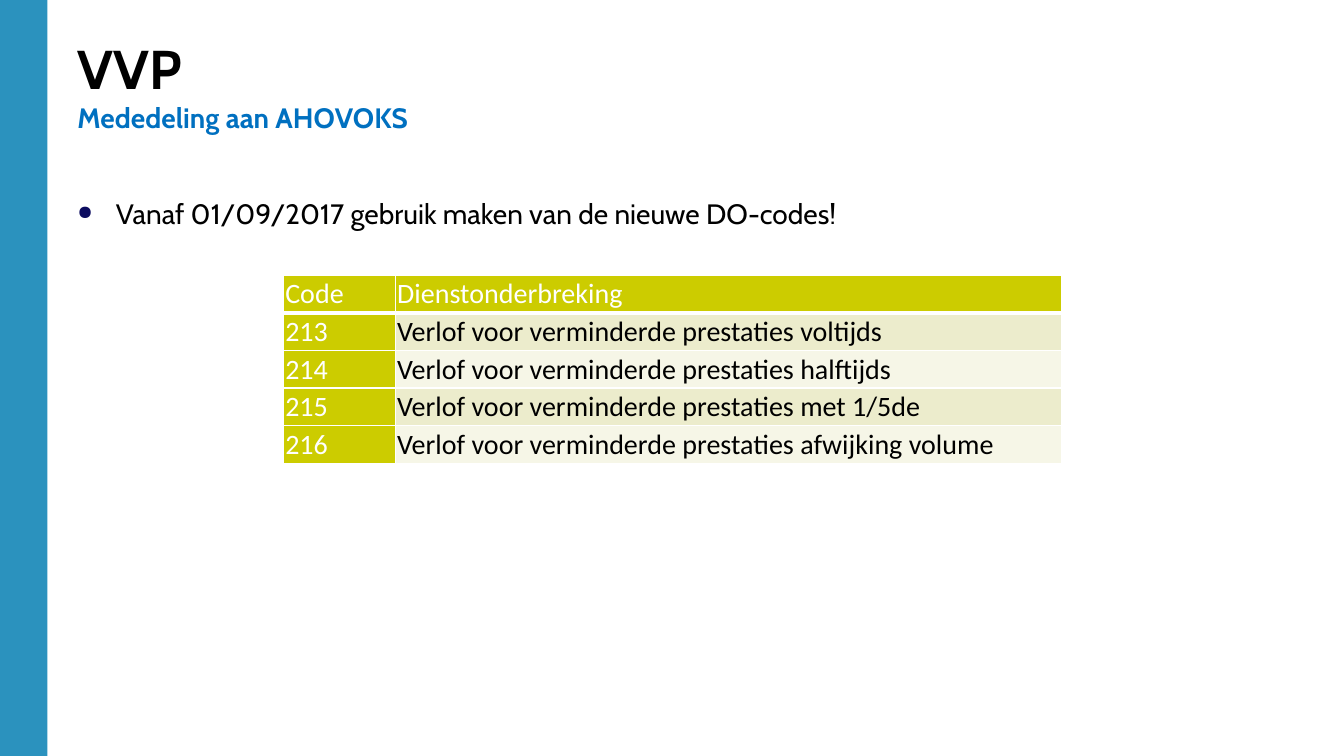
from typing import NamedTuple

from lxml import etree
from pptx import Presentation
from pptx.dml.color import RGBColor
from pptx.enum import shapes, text
from pptx.oxml import ns
from pptx.util import Inches, Pt

COLORS = {
    "white": "FFFFFF",
    "black": "000000",
    "bar": "2B92BE",
    "subtitle": "0070C0",
    "bullet": "0C0C60",
    "header": "CCCC00",
    "odd": "ECECCC",
    "even": "F6F6E7",
}
HEADING_FONT, TABLE_FONT = "Cabin", "Calibri"
COLUMN_WIDTHS = (1.11, 6.61)
ROW_HEIGHT = 0.37
CELL_MARGIN = Inches(0.02)


class CodeRow(NamedTuple):
    code: str
    interruption: str


class Style(NamedTuple):
    size: float
    font: str
    color: str
    bold: bool = False


ROWS = [
    CodeRow("Code", "Dienstonderbreking"),
    CodeRow("213", "Verlof voor verminderde prestaties voltijds"),
    CodeRow("214", "Verlof voor verminderde prestaties halftijds"),
    CodeRow("215", "Verlof voor verminderde prestaties met 1/5de"),
    CodeRow("216", "Verlof voor verminderde prestaties afwijking volume"),
]


def rgb(name: str) -> RGBColor:
    return RGBColor.from_string(COLORS[name])


def add_run(p, content: str, style: Style) -> None:
    r = p.add_run()
    r.text = content
    r.font.size = Pt(style.size)
    r.font.name = style.font
    r.font.bold = style.bold
    r.font.color.rgb = rgb(style.color)


def add_text_frame(slide, left: float, top: float, width: float, height: float):
    tf = slide.shapes.add_textbox(
        Inches(left), Inches(top), Inches(width), Inches(height)).text_frame
    tf.word_wrap = True
    return tf


def add_side_bar(slide) -> None:
    sp = slide.shapes.add_shape(
        shapes.MSO_SHAPE.RECTANGLE, 0, 0, Inches(0.47), Inches(7.5))
    sp.shadow.inherit = False
    sp.fill.solid()
    sp.fill.fore_color.rgb = rgb("bar")
    sp.line.fill.background()


def add_title(slide) -> None:
    tf = add_text_frame(slide, 0.67, 0.13, 12.41, 1.25)
    tf.vertical_anchor = text.MSO_ANCHOR.BOTTOM
    p = tf.paragraphs[0]
    add_run(p, "VVP", Style(39, HEADING_FONT, "black", True))
    p.add_line_break()
    add_run(p, "Mededeling aan AHOVOKS", Style(20, HEADING_FONT, "subtitle", True))


def set_bullet(p) -> None:
    """Give the paragraph a hanging, coloured round bullet."""
    pPr = p._p.get_or_add_pPr()
    pPr.set("marL", str(Inches(0.38)))
    pPr.set("indent", str(-Inches(0.38)))
    color = etree.SubElement(pPr, ns.qn("a:buClr"))
    etree.SubElement(color, ns.qn("a:srgbClr"), val=COLORS["bullet"])
    etree.SubElement(pPr, ns.qn("a:buSzPct"), val="70000")
    etree.SubElement(pPr, ns.qn("a:buChar"), char="●")


def add_body(slide) -> None:
    tf = add_text_frame(slide, 0.67, 1.55, 12, 5.2)
    tf.margin_top = Inches(0.44)
    p = tf.paragraphs[0]
    p.line_spacing = 0.9
    set_bullet(p)
    add_run(p, "Vanaf 01/09/2017 gebruik maken van de nieuwe DO-codes!",
            Style(20, HEADING_FONT, "black"))


def set_borders(cell, widths: dict[str, float]) -> None:
    tcPr = cell._tc.get_or_add_tcPr()
    for side, width in widths.items():
        line = etree.SubElement(tcPr, ns.qn(f"a:ln{side}"), w=str(Pt(width)))
        fill = etree.SubElement(line, ns.qn("a:solidFill"))
        etree.SubElement(fill, ns.qn("a:srgbClr"), val=COLORS["white"])


def fill_cell(cell, content: str, row: int, column: int) -> None:
    is_header = row == 0
    is_accent = is_header or column == 0
    set_borders(cell, {"L": 1, "R": 1,
                       "T": 3 if row == 1 else 1,
                       "B": 3 if is_header else 1})
    cell.fill.solid()
    cell.fill.fore_color.rgb = rgb(
        "header" if is_accent else "odd" if row % 2 else "even")
    cell.margin_left = cell.margin_right = CELL_MARGIN
    cell.margin_top = cell.margin_bottom = CELL_MARGIN
    cell.vertical_anchor = (
        text.MSO_ANCHOR.MIDDLE if is_header else text.MSO_ANCHOR.TOP)
    p = cell.text_frame.paragraphs[0]
    p.space_after = Pt(7.5)
    add_run(p, content, Style(20, TABLE_FONT, "white" if is_accent else "black"))


def add_code_table(slide) -> None:
    table = slide.shapes.add_table(
        len(ROWS), len(COLUMN_WIDTHS), Inches(2.81), Inches(2.73),
        Inches(sum(COLUMN_WIDTHS)), Inches(ROW_HEIGHT * len(ROWS))).table
    for column, width in zip(table.columns, COLUMN_WIDTHS):
        column.width = Inches(width)
    for i, code_row in enumerate(ROWS):
        table.rows[i].height = Inches(ROW_HEIGHT)
        for j, content in enumerate(code_row):
            fill_cell(table.cell(i, j), content, i, j)


def main() -> None:
    prs = Presentation()
    prs.slide_width, prs.slide_height = Inches(13.33), Inches(7.5)
    slide = prs.slides.add_slide(prs.slide_layouts[6])
    add_side_bar(slide)
    add_title(slide)
    add_body(slide)
    add_code_table(slide)
    prs.save("out.pptx")


if __name__ == "__main__":
    main()
